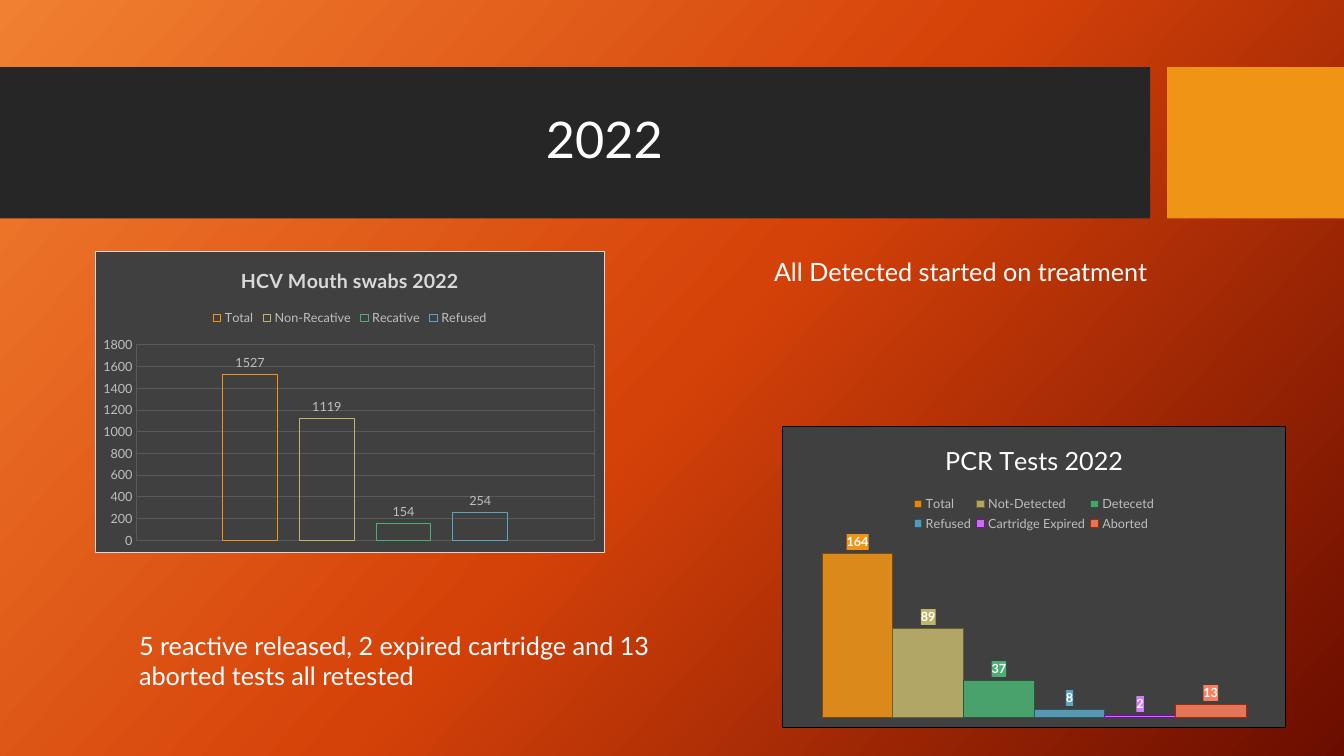
from copy import deepcopy
from lxml.etree import SubElement
from pptx import Presentation
from pptx.chart.data import CategoryChartData
from pptx.dml.color import RGBColor
from pptx.enum.chart import XL_CHART_TYPE, XL_LABEL_POSITION, XL_LEGEND_POSITION, XL_TICK_MARK
from pptx.enum.shapes import MSO_SHAPE
from pptx.enum.text import MSO_ANCHOR, PP_ALIGN
from pptx.oxml import parse_xml
from pptx.oxml.ns import nsdecls, qn
from pptx.util import Pt

theme = {
    "font": "Lato", "white": "FFFFFF", "dark": "262626", "gold": "F09415",
    "panel": "404040", "grid": "595959", "soft": "BFBFBF", "pale": "D9D9D9", "black": "000000",
    "back": [(0, "F18031"), (0.5, "D54209"), (1, "6A0D00")],
    "bars": ["F09415", "C1B56B", "4BAF73", "5AA6C0", "D17DF9", "FA7E5C"],
    "edges": ["7B4A08", "6A612C", "26583A", "275666", "7C08B3", "A62805"],
    "title": 36, "body": 18, "head": 14, "base": 10, "small": 9,
}


def style(font, size, color, bold=False):
    look = {"name": theme["font"], "size": Pt(size), "bold": bold}
    for key, value in look.items():
        setattr(font, key, value)
    font.color.rgb = RGBColor.from_string(color)


def place(node, spot, box, inner=False):
    for old in node.findall(qn("c:layout")):
        node.remove(old)
    outer = parse_xml(f"<c:layout {nsdecls('c')}/>")
    manual = SubElement(outer, qn("c:manualLayout"))
    pairs = [("layoutTarget", "inner")] if inner else []
    pairs += [("xMode", "edge"), ("yMode", "edge"), *zip("xywh", box)]
    for tag, value in pairs:
        SubElement(manual, qn(f"c:{tag}")).set("val", str(value))
    node.insert(spot, outer)


deck = Presentation()
deck.slide_width, deck.slide_height = Pt(960), Pt(540)
slide = deck.slides.add_slide(deck.slide_layouts[6])

# Background gradient
fill = slide.background.fill
fill.gradient()
fill.gradient_angle = 318
first = fill.gradient_stops[0]._element
first.getparent().append(deepcopy(first))
for stop, (pos, color) in zip(fill.gradient_stops, theme["back"]):
    stop.position = pos
    stop.color.rgb = RGBColor.from_string(color)

# Title band and side block
for left, width, color in [(0, 821.5, theme["dark"]), (833.75, 126.25, theme["gold"])]:
    band = slide.shapes.add_shape(MSO_SHAPE.RECTANGLE, Pt(left), Pt(48), Pt(width), Pt(108))
    band.shadow.inherit = False
    band.fill.solid()
    band.fill.fore_color.rgb = RGBColor.from_string(color)
    band.line.fill.background()

# Title and notes on the results
texts = [
    ("2022", (53.3, 59, 756.7, 85), theme["title"],
     {"alignment": PP_ALIGN.CENTER, "line_spacing": 0.9}, MSO_ANCHOR.MIDDLE),
    ("5 reactive released, 2 expired cartridge and 13 aborted tests all retested",
     (92.2, 446.4, 411, 51), theme["body"], {}, MSO_ANCHOR.TOP),
    ("All Detected started on treatment",
     (545.8, 179.3, 355, 29), theme["body"], {}, MSO_ANCHOR.TOP),
]
for text, box, size, form, anchor in texts:
    frame = slide.shapes.add_textbox(*map(Pt, box)).text_frame
    frame.word_wrap = True
    frame.vertical_anchor = anchor
    para = frame.paragraphs[0]
    para.text = text
    for key, value in form.items():
        setattr(para, key, value)
    style(para.runs[0].font, size, theme["white"])

# Charts
charts = [
    {"title": "PCR Tests 2022", "box": (558.7, 304.5, 360, 215), "solid": True,
     "head": (theme["body"], theme["white"], False), "edge": (theme["black"], 0.5),
     "gap": 84, "lap": 0, "top": 180, "step": 20,
     "key": (0.25, 0.22, 0.5, 0.14), "plot": (0.02, 0.37, 0.96, 0.6),
     "data": {"Total": 164, "Not-Detected": 89, "Detecetd": 37,
              "Refused": 8, "Cartridge Expired": 2, "Aborted": 13}},
    {"title": "HCV Mouth swabs 2022", "box": (68, 179.5, 364, 215.5), "solid": False,
     "head": (theme["head"], theme["pale"], True), "edge": (theme["pale"], 0.75),
     "gap": 315, "lap": -40, "top": 1800, "step": 200,
     "key": (0.22, 0.18, 0.56, 0.08), "plot": (0.08, 0.31, 0.9, 0.65),
     "data": {"Total": 1527, "Non-Recative": 1119, "Recative": 154, "Refused": 254}},
]
for item in charts:
    data = CategoryChartData()
    data.categories = ["1"]
    for name, value in item["data"].items():
        data.add_series(name, [value])
    chart = slide.shapes.add_chart(
        XL_CHART_TYPE.COLUMN_CLUSTERED, *map(Pt, item["box"]), data).chart
    style(chart.font, theme["base"], theme["white"])

    # Panel
    tint, width = item["edge"]
    panel = parse_xml(
        f'<c:spPr {nsdecls("c", "a")}><a:solidFill><a:srgbClr val="{theme["panel"]}"/></a:solidFill>'
        f'<a:ln w="{Pt(width)}"><a:solidFill><a:srgbClr val="{tint}"/></a:solidFill></a:ln></c:spPr>')
    root = chart._chartSpace
    root.find(qn("c:txPr")).addprevious(panel)

    # Title and legend
    chart.has_title = True
    head = chart.chart_title.text_frame
    head.text = item["title"]
    style(head.paragraphs[0].runs[0].font, *item["head"])
    chart.has_legend = True
    key = chart.legend
    key.position = XL_LEGEND_POSITION.TOP
    key.include_in_layout = False
    style(key.font, theme["small"], theme["soft"])
    place(key._element, 1, item["key"])
    place(root.find(f".//{qn('c:plotArea')}"), 0, item["plot"], True)

    # Axes
    cat, val = chart.category_axis, chart.value_axis
    cat.visible = False
    val.visible = not item["solid"]
    scale = {"minimum_scale": 0, "maximum_scale": item["top"], "major_unit": item["step"],
             "major_tick_mark": XL_TICK_MARK.NONE}
    for name, value in scale.items():
        setattr(val, name, value)
    style(val.tick_labels.font, theme["small"], theme["soft"])
    val.format.line.fill.background()
    for axis in (cat, val):
        axis.has_major_gridlines = not item["solid"]
        if axis.has_major_gridlines:
            line = axis.major_gridlines.format.line
            line.width = Pt(0.75)
            line.color.rgb = RGBColor.from_string(theme["grid"])

    # Bars and labels
    plot = chart.plots[0]
    for name, value in {"gap_width": item["gap"], "overlap": item["lap"],
                        "vary_by_categories": False}.items():
        setattr(plot, name, value)
    for bar, color, edge in zip(plot.series, theme["bars"], theme["edges"]):
        bar.invert_if_negative = False
        form, tags = bar.format, bar.data_labels
        form.line.width = Pt(0.75)
        form.line.color.rgb = RGBColor.from_string(edge if item["solid"] else color)
        tags.show_value = True
        tags.position = XL_LABEL_POSITION.OUTSIDE_END
        style(tags.font, theme["small"], theme["white" if item["solid"] else "soft"], item["solid"])
        if item["solid"]:
            form.fill.solid()
            form.fill.fore_color.rgb = RGBColor.from_string(color)
            shade = form.fill._xPr.find(f"{qn('a:solidFill')}/{qn('a:srgbClr')}")
            SubElement(shade, qn("a:alpha")).set("val", "88000")
            tags._element.find(qn("c:txPr")).addprevious(parse_xml(
                f'<c:spPr {nsdecls("c", "a")}><a:solidFill><a:srgbClr val="{color}"/>'
                "</a:solidFill></c:spPr>"))
        else:
            form.fill.background()

deck.save("out.pptx")
